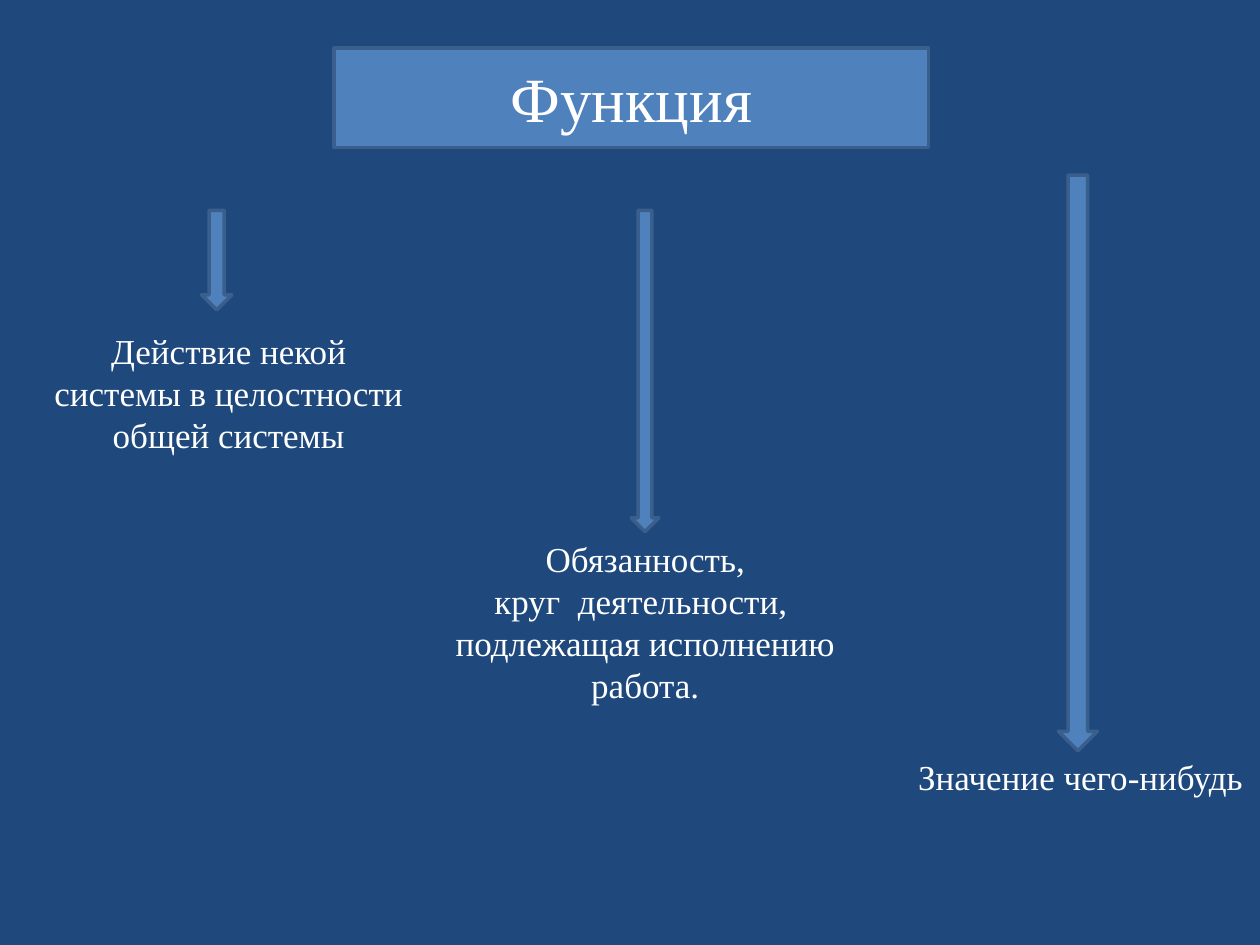
from dataclasses import dataclass

from pptx import Presentation
from pptx import util as u
from pptx.dml.color import RGBColor
from pptx.enum import shapes, text


@dataclass(frozen=True)
class Theme:
    background: RGBColor = RGBColor.from_string("1F497D")
    fill: RGBColor = RGBColor.from_string("4F81BD")
    outline: RGBColor = RGBColor.from_string("3A5F8C")
    ink: RGBColor = RGBColor.from_string("FFFFFF")
    font: str = "Times New Roman"
    title_size: int = 36
    body_size: int = 20
    line_width: int = 2


THEME = Theme()

# Boxes are left, top, width, height in points.
TITLE = ("Функция", (190.8, 27.4, 339.8, 56.9))
MEANINGS = [
    {
        "arrow": (115.2, 120.2, 17.3, 56.9),
        "box": (20.2, 185, 221, 79.9),
        "lines": ["Действие некой системы в целостности общей системы"],
    },
    {
        "arrow": (360.7, 120.2, 15.8, 183.6),
        "box": (239.8, 303.8, 257.8, 104.4),
        "lines": ["Обязанность,", "круг  деятельности, ", "подлежащая исполнению работа."],
    },
    {
        "arrow": (604.8, 100.1, 22.3, 329),
        "box": (504, 428.4, 226.8, 31.7),
        "lines": ["Значение чего-нибудь"],
    },
]


def points(box):
    return [u.Pt(length) for length in box]


def add_block(slide, kind, box):
    shape = slide.shapes.add_shape(kind, *points(box))
    shape.shadow.inherit = False
    shape.fill.solid()
    shape.fill.fore_color.rgb = THEME.fill
    shape.line.color.rgb = THEME.outline
    shape.line.width = u.Pt(THEME.line_width)
    return shape


def write_lines(shape, lines, size, anchor):
    frame = shape.text_frame
    frame.word_wrap = True
    frame.vertical_anchor = anchor
    for index, line in enumerate(lines):
        paragraph = frame.add_paragraph() if index else frame.paragraphs[0]
        paragraph.alignment = text.PP_ALIGN.CENTER
        run = paragraph.add_run()
        run.text = line
        run.font.name = THEME.font
        run.font.size = u.Pt(size)
        run.font.color.rgb = THEME.ink


def main():
    presentation = Presentation()
    presentation.slide_width, presentation.slide_height = u.Pt(720), u.Pt(540)
    slide = presentation.slides.add_slide(presentation.slide_layouts[6])
    slide.background.fill.solid()
    slide.background.fill.fore_color.rgb = THEME.background

    title, title_box = TITLE
    banner = add_block(slide, shapes.MSO_SHAPE.RECTANGLE, title_box)
    write_lines(banner, [title], THEME.title_size, text.MSO_ANCHOR.MIDDLE)

    for meaning in MEANINGS:
        add_block(slide, shapes.MSO_SHAPE.DOWN_ARROW, meaning["arrow"])
        caption = slide.shapes.add_textbox(*points(meaning["box"]))
        write_lines(caption, meaning["lines"], THEME.body_size, text.MSO_ANCHOR.TOP)

    presentation.save("out.pptx")


if __name__ == "__main__":
    main()
